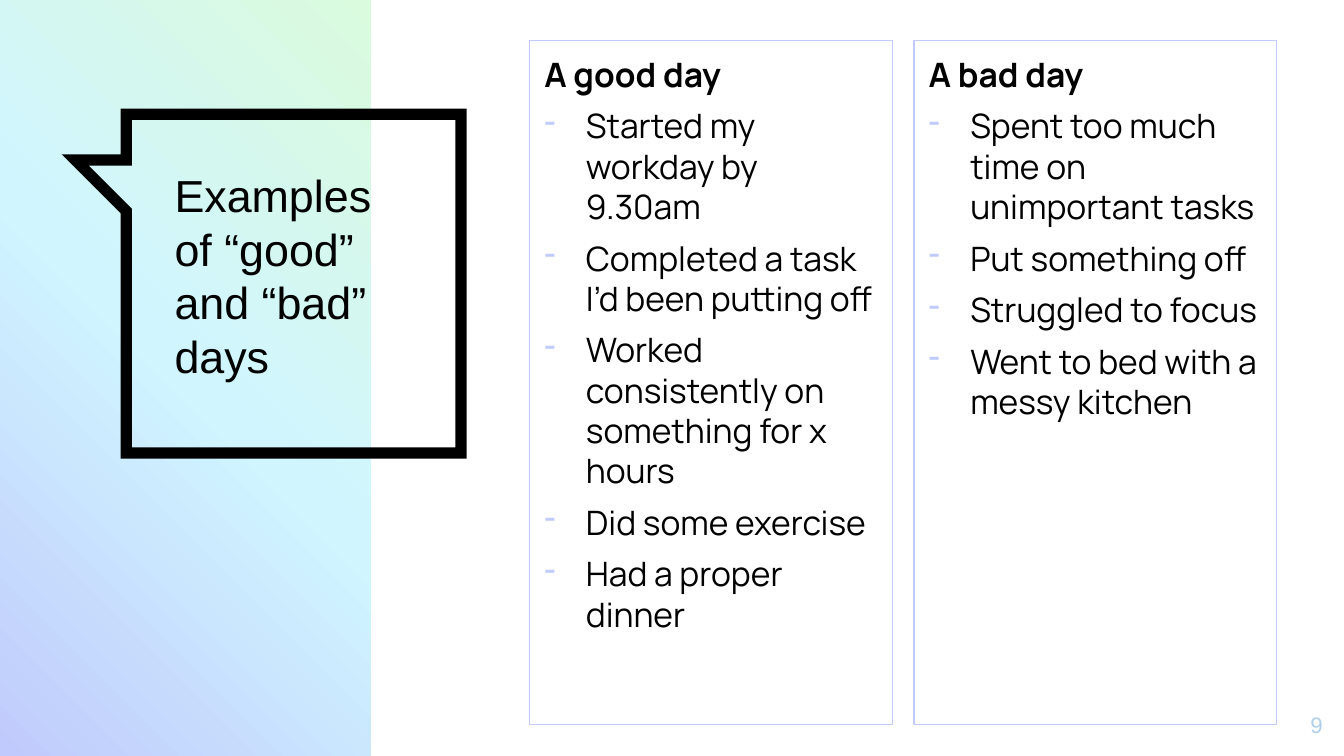
from copy import deepcopy
from lxml.etree import SubElement
from pptx import Presentation
from pptx.dml.color import RGBColor
from pptx.enum.shapes import MSO_SHAPE
from pptx.enum.text import MSO_ANCHOR, PP_ALIGN
from pptx.oxml.ns import qn
from pptx.util import Inches, Pt

BLACK = RGBColor(0x00, 0x00, 0x00)
LAVENDER = RGBColor(0xC0, 0xCA, 0xFC)
AQUA = RGBColor(0xD0, 0xF5, 0xFF)
MINT = RGBColor(0xDA, 0xFB, 0xDD)
PALE_BLUE = RGBColor(0xAF, 0xCF, 0xEC)


def prepare_frame(shape):
    frame = shape.text_frame
    frame.word_wrap = True
    frame.vertical_anchor = MSO_ANCHOR.TOP
    frame.margin_left = frame.margin_right = Inches(0.1)
    frame.margin_top = frame.margin_bottom = Inches(0.1)
    return frame


def style_paragraph(para, font_name, size, color, bold=False):
    for span in para.runs:
        span.font.name = font_name
        span.font.size = Pt(size)
        span.font.bold = bold
        span.font.color.rgb = color


deck = Presentation()
deck.slide_width = Inches(10)
deck.slide_height = Inches(10) * 9 // 16
page = deck.slides.add_slide(deck.slide_layouts[6])

side_panel = page.shapes.add_shape(MSO_SHAPE.RECTANGLE, 0, 0, Inches(2.76), deck.slide_height)
side_panel.shadow.inherit = False
side_panel.line.fill.background()
side_panel.fill.gradient()
side_panel.fill.gradient_angle = 45
stop_list = side_panel.fill._fill._gradFill.find(qn("a:gsLst"))
stop_list.insert(1, deepcopy(stop_list[0]))
for stop, color, position in zip(side_panel.fill.gradient_stops, (LAVENDER, AQUA, MINT), (0, 0.5, 1)):
    stop.color.rgb = color
    stop.position = position

bubble_points = [(3.43, 0.85), (3.43, 3.37), (0.94, 3.37), (0.94, 1.57), (0.56, 1.19), (0.94, 1.19)]
outline = page.shapes.build_freeform(Inches(0.94), Inches(0.85))
outline.add_line_segments([(Inches(x), Inches(y)) for x, y in bubble_points], close=True)
bubble = outline.convert_to_shape()
bubble.shadow.inherit = False
bubble.fill.background()
bubble.line.color.rgb = BLACK
bubble.line.width = Pt(6)
SubElement(bubble.line._ln, qn("a:miter"), lim="800000")

title = page.shapes.add_textbox(Inches(1.2), Inches(1.15), Inches(2.01), Inches(2.09))
para = prepare_frame(title).paragraphs[0]
para.text = "Examples of “good” and “bad” days"
para.line_spacing = Pt(28.7)
style_paragraph(para, "Arial", 24, BLACK)

columns = [
    (3.94, "A good day", [
        "Started my workday by 9.30am",
        "Completed a task I’d been putting off",
        "Worked consistently on something for x hours",
        "Did some exercise",
        "Had a proper dinner",
    ]),
    (6.8, "A bad day", [
        "Spent too much time on unimportant tasks",
        "Put something off",
        "Struggled to focus",
        "Went to bed with a messy kitchen",
    ]),
]
for left, heading, items in columns:
    column = page.shapes.add_shape(MSO_SHAPE.RECTANGLE, Inches(left), Inches(0.3), Inches(2.7), Inches(5.09))
    column.shadow.inherit = False
    column.fill.background()
    column.line.color.rgb = LAVENDER
    column.line.width = Pt(0.75)
    frame = prepare_frame(column)
    frame.margin_left = Inches(0.11)
    frame.margin_right = Inches(0.13)
    frame.text = "\n".join([heading, *items])
    for index, para in enumerate(frame.paragraphs):
        para.alignment = PP_ALIGN.LEFT
        para.line_spacing = Pt(21.6)
        para.space_before = Pt(6 if index else 0)
        style_paragraph(para, "Manrope", 18, BLACK, bold=index == 0)
        if index:
            properties = para._p.get_or_add_pPr()
            properties.set("marL", str(Inches(0.31)))
            properties.set("indent", str(-Inches(0.31)))
            bullet_color = SubElement(properties, qn("a:buClr"))
            SubElement(bullet_color, qn("a:srgbClr"), val=str(LAVENDER))
            SubElement(properties, qn("a:buChar"), char="-")

page_number = page.shapes.add_textbox(Inches(9.34), Inches(5.19), Inches(0.6), Inches(0.43))
para = prepare_frame(page_number).paragraphs[0]
para.text = "9"
para.alignment = PP_ALIGN.RIGHT
style_paragraph(para, "Arial", 12, PALE_BLUE)

deck.save("out.pptx")
